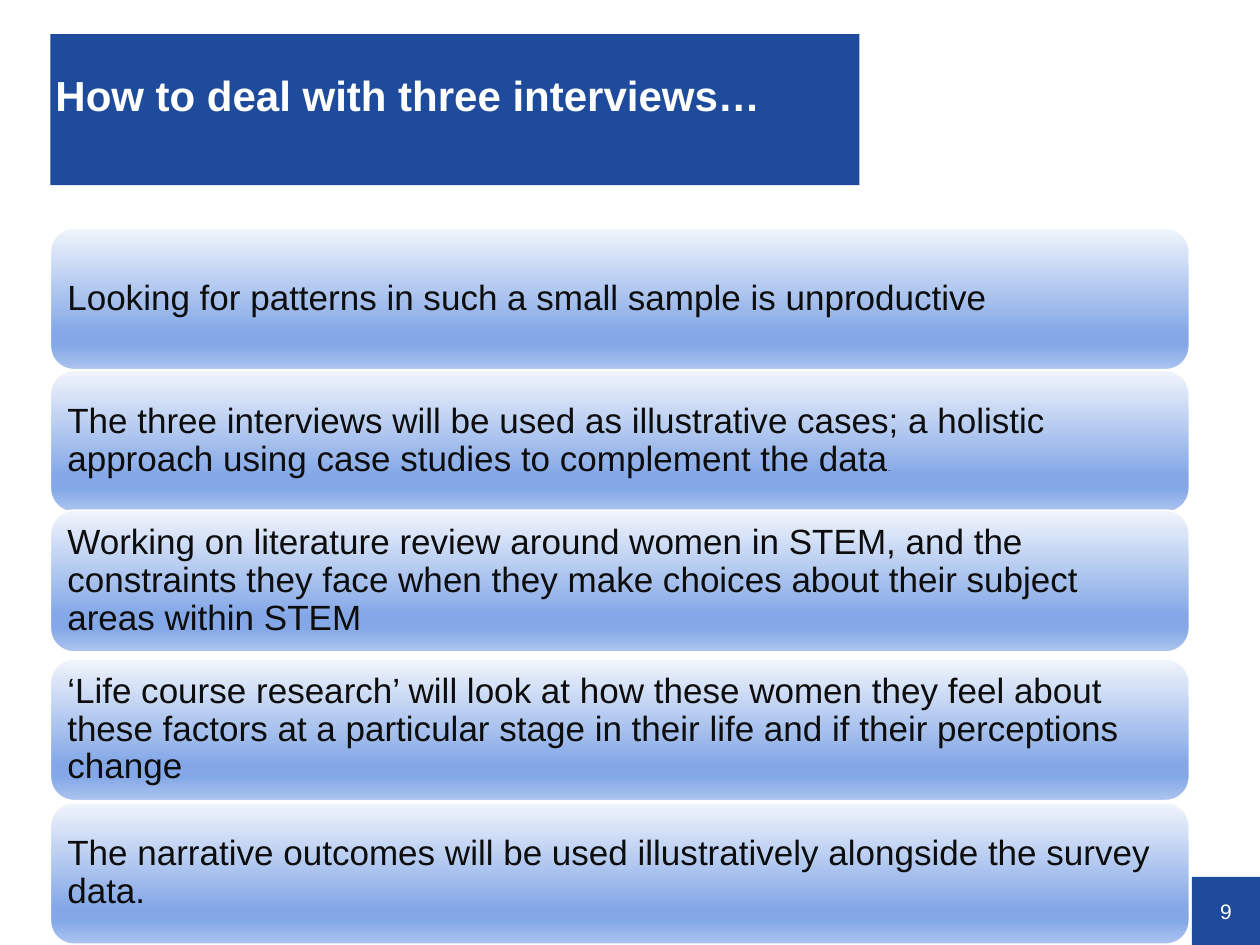
from dataclasses import dataclass

from lxml.etree import SubElement
from pptx import Presentation
from pptx.dml.color import RGBColor
from pptx.enum.shapes import MSO_SHAPE
from pptx.enum.text import MSO_ANCHOR, MSO_AUTO_SIZE, PP_ALIGN
from pptx.oxml.ns import qn
from pptx.util import Inches, Pt

WIDTH, HEIGHT = 10, 7.5
LEFT = 0.04 * WIDTH
CARD_WIDTH, CARD_HEIGHT = 0.904 * WIDTH, 0.15 * HEIGHT
BADGE = 0.54
FONT = "Arial"
BLUE, WHITE, INK = "1E4B9B", "FFFFFF", "0D0D0D"
CARD_STOPS = ((0, "F1F5FC"), (74, "84A8E7"), (83, "84A8E7"), (100, "ADC5EF"))


@dataclass(frozen=True)
class Span:
    text: str
    size: float = 20
    color: str = INK
    bold: bool = False


@dataclass(frozen=True)
class Card:
    top: float
    spans: tuple[Span, ...]


CARDS = (
    Card(1.81, (Span("Looking for patterns in such a small sample is unproductive"),)),
    Card(2.94, (Span("The three interviews will be used as illustrative cases; a holistic "
                     "approach using case studies to complement the data"),
                Span(".", size=5))),
    Card(4.05, (Span("Working on literature review around women in STEM, and the "
                     "constraints they face when they make choices about their subject "
                     "areas within STEM"),)),
    Card(5.23, (Span("‘Life course research’ will look at how these women they feel about "
                     "these factors at a particular stage in their life and if their "
                     "perceptions change"),)),
    Card(6.37, (Span("The narrative outcomes will be used illustratively alongside the "
                     "survey data."),)),
)


def rgb(value: str) -> RGBColor:
    return RGBColor.from_string(value)


def fill_solid(shape, color: str) -> None:
    shape.fill.solid()
    shape.fill.fore_color.rgb = rgb(color)


def fill_gradient(shape, stops: tuple[tuple[int, str], ...]) -> None:
    """Fill from top to bottom with any number of colour stops."""
    shape.fill.gradient()
    gradient = shape.fill._fill._gradFill
    stop_list = gradient.find(qn("a:gsLst"))
    for old_stop in list(stop_list):
        stop_list.remove(old_stop)
    for percent, color in stops:
        stop = SubElement(stop_list, qn("a:gs"), pos=str(percent * 1000))
        SubElement(stop, qn("a:srgbClr"), val=color)
    shape.fill.gradient_angle = 270


def write(shape, spans: tuple[Span, ...], margins: tuple[float, float, float, float],
          align=PP_ALIGN.LEFT, spacing: float = 0.9) -> None:
    """Write one paragraph; margins run left, top, right, bottom."""
    frame = shape.text_frame
    frame.auto_size = MSO_AUTO_SIZE.NONE
    frame.word_wrap = True
    frame.vertical_anchor = MSO_ANCHOR.MIDDLE
    (frame.margin_left, frame.margin_top,
     frame.margin_right, frame.margin_bottom) = map(Inches, margins)
    para = frame.paragraphs[0]
    para.alignment = align
    para.line_spacing = spacing
    para.space_before = Pt(0)
    for span in spans:
        run = para.add_run()
        run.text = span.text
        run.font.name = FONT
        run.font.size = Pt(span.size)
        run.font.bold = span.bold
        run.font.color.rgb = rgb(span.color)


def add_title(page) -> None:
    title = page.shapes.title
    title.left, title.top = Inches(LEFT), Inches(0.27)
    title.width, title.height = Inches(0.642 * WIDTH), Inches(0.16 * HEIGHT)
    fill_solid(title, BLUE)
    # The deeper bottom margin lifts the heading above the middle
    write(title, (Span("How to deal with three interviews…", 24, WHITE, True),),
          (0.04, 0.02, 0, 0.21))


def add_page_number(page, number: int) -> None:
    badge = page.shapes.add_shape(
        MSO_SHAPE.RECTANGLE, Inches(WIDTH - BADGE), Inches(HEIGHT - BADGE),
        Inches(BADGE), Inches(BADGE))
    badge.shadow.inherit = False
    fill_solid(badge, BLUE)
    badge.line.fill.background()
    write(badge, (Span(str(number), 12, WHITE),), (0, 0, 0, 0), PP_ALIGN.CENTER, 1)


def add_card(page, card: Card) -> None:
    box = page.shapes.add_shape(
        MSO_SHAPE.ROUNDED_RECTANGLE, Inches(LEFT), Inches(card.top),
        Inches(CARD_WIDTH), Inches(CARD_HEIGHT))
    box.shadow.inherit = False
    fill_gradient(box, CARD_STOPS)
    box.line.color.rgb = rgb(WHITE)
    box.line.width = Pt(1)
    write(box, card.spans, (0.08, 0.08, 0.08, 0.08))


def main() -> None:
    deck = Presentation()
    deck.slide_width, deck.slide_height = Inches(WIDTH), Inches(HEIGHT)
    page = deck.slides.add_slide(deck.slide_layouts[5])  # title only

    # Heading and page number
    add_title(page)
    add_page_number(page, 9)

    # Stack of statements
    for card in CARDS:
        add_card(page, card)

    deck.save("out.pptx")


if __name__ == "__main__":
    main()
